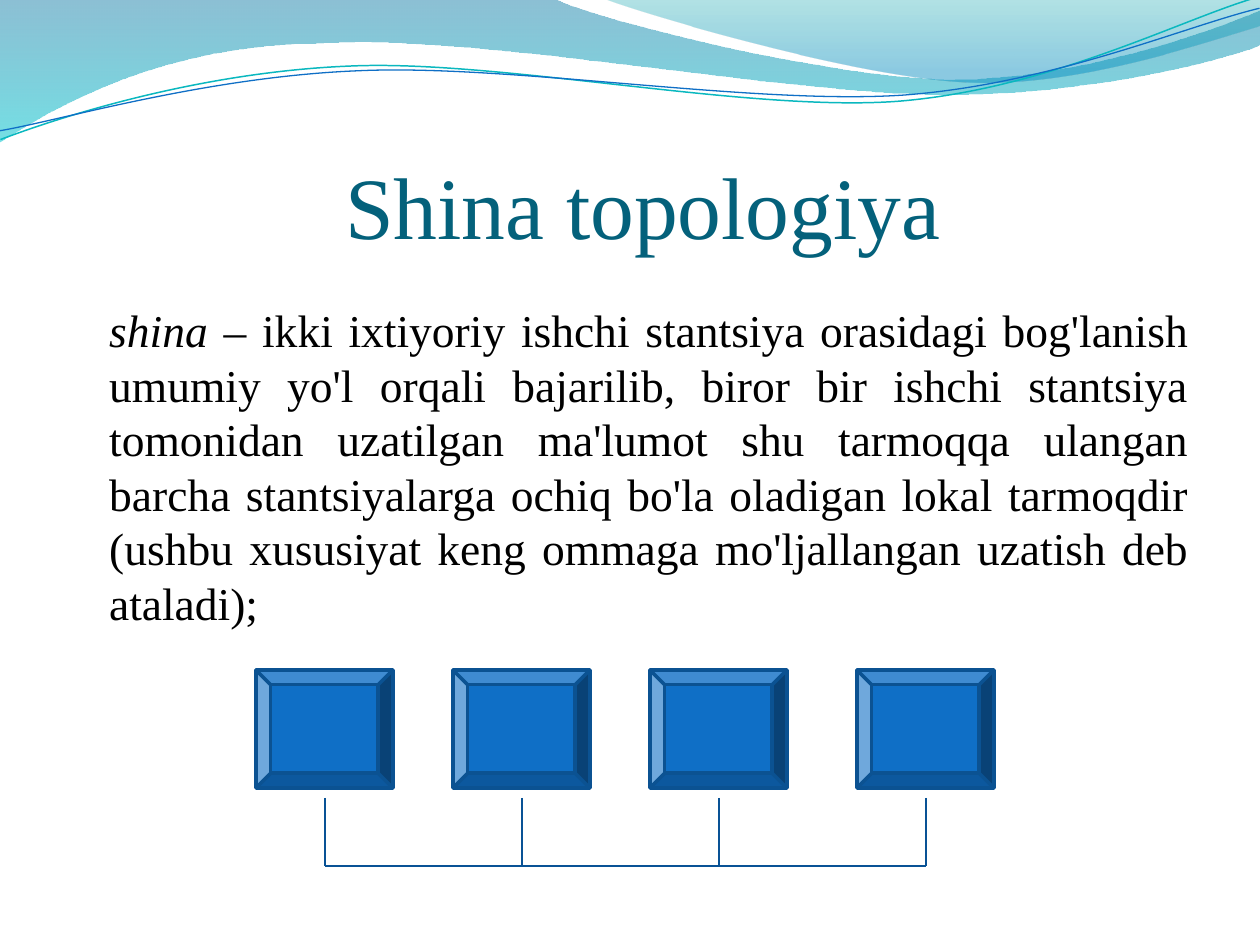
from dataclasses import dataclass

from pptx import Presentation, util as u
from pptx.dml.color import RGBColor
from pptx.enum import shapes as sh, text as tx
from pptx.oxml.ns import qn
from lxml import etree

PX = 914400 // 126  # EMU per px


@dataclass(frozen=True)
class Theme:
    font: str = "Times New Roman"
    head: str = "04617B"
    ink: str = "000000"
    box: str = "0F6FC6"
    edge: str = "0B5292"
    wire: str = "095295"
    teal: str = "0AB8BF"
    head_pt: int = 50
    body_pt: int = 26


T = Theme()

TITLE = "Shinа tоpоlоgiya"
TERM = "\tshinа"
BODY = (
    " – ikki iхtiyoriy ishchi stаntsiya оrаsidаgi bоg'lаnish umumiy yo'l оrqаli "
    "bаjаrilib, birоr bir ishchi stаntsiya tоmоnidаn uzаtilgаn mа'lumоt shu tаrmоqqа "
    "ulаngаn bаrchа stаntsiyalаrgа оchiq bo'lа оlаdigаn lоkаl tаrmоqdir (ushbu "
    "хususiyat kеng оmmаgа mo'ljаllаngаn uzаtish dеb аtаlаdi);"
)

# Each step holds one point (straight) or three (curve)
BAND = [[(0, -1)], [(554, -1)],
        [(600, 21), (837, 79), (955, 79)], [(1075, 79), (1207, 33), (1260, 11)],
        [(1261, 45)],
        [(1239, 55), (1096, 96), (940, 94)], [(784, 94), (481, 35), (324, 43)],
        [(163, 44), (58, 105), (-1, 142)], [(0, -1)]]
CREST = [[(604, -1)],
         [(641, 14), (859, 78), (969, 82)], [(1079, 87), (1211, 40), (1260, 26)],
         [(1260, 0)], [(604, -1)]]
# Lines before their tilt
TILT = 357.3
TOP_LINE = [[(-2, 110)], [(59, 90), (200, 52), (350, 53)],
            [(499, 53), (745, 118), (896, 114)], [(1049, 109), (1184, 45), (1260, 27)]]
LOW_LINE = [[(-2, 101)], [(57, 94), (206, 57), (358, 58)],
            [(509, 58), (751, 111), (902, 108)], [(1052, 104), (1188, 52), (1262, 38)]]

# Bus diagram
BOX_X = (256, 453, 650, 857)
BOX_Y, BOX_W, BOX_H = 670, 137, 118
STUB_Y, BUS_Y = 798, 866


def rgb(code):
    return RGBColor.from_string(code)


def add_path(slide, steps, close):
    """Lay all points as segments, then join each three into a curve."""
    start, *rest = steps
    pen = slide.shapes.build_freeform(*start[0], scale=PX)
    pen.add_line_segments([p for step in rest for p in step], close=close)
    shape = pen.convert_to_shape()
    shape.shadow.inherit = False
    legs = iter(list(shape._element.iter(qn("a:lnTo"))))
    for step in rest:
        group = [next(legs) for _ in step]
        if len(group) == 3:
            curve = etree.Element(qn("a:cubicBezTo"))
            group[0].addprevious(curve)
            for leg in group:
                curve.append(leg[0])
                leg.getparent().remove(leg)
    return shape


def add_wave(slide, steps, stops):
    """Stops are (position, colour, opacity in percent)."""
    shape = add_path(slide, steps, True)
    shape.line.fill.background()
    shape.fill.gradient()
    shape.fill.gradient_angle = 270
    for stop, (pos, code, _) in zip(shape.fill.gradient_stops, stops):
        stop.position = pos
        stop.color.rgb = rgb(code)
    for node, (_, _, alpha) in zip(shape._element.spPr.iter(qn("a:srgbClr")), stops):
        etree.SubElement(node, qn("a:alpha"), val=str(alpha * 1000))


def add_curve(slide, steps, code, width):
    shape = add_path(slide, steps, False)
    shape.rotation = TILT
    shape.fill.background()
    shape.line.color.rgb = rgb(code)
    shape.line.width = u.Pt(width)


def add_text(slide, box, runs, size, code, align):
    """Runs are (text, italic)."""
    frame = slide.shapes.add_textbox(*(v * PX for v in box)).text_frame
    frame.word_wrap = True
    para = frame.paragraphs[0]
    para.alignment = align
    for words, slant in runs:
        run = para.add_run()
        run.text = words
        run.font.name = T.font
        run.font.size = u.Pt(size)
        run.font.italic = slant
        run.font.color.rgb = rgb(code)
    return frame


def add_box(slide, x):
    box = slide.shapes.add_shape(
        sh.MSO_SHAPE.BEVEL, x * PX, BOX_Y * PX, BOX_W * PX, BOX_H * PX)
    box.shadow.inherit = False
    box.fill.solid()
    box.fill.fore_color.rgb = rgb(T.box)
    box.line.color.rgb = rgb(T.edge)
    box.line.width = u.Pt(2)


def add_wire(slide, *ends):
    wire = slide.shapes.add_connector(
        sh.MSO_CONNECTOR.STRAIGHT, *(v * PX for v in ends))
    wire.line.color.rgb = rgb(T.wire)
    wire.line.width = u.Pt(0.75)
    etree.SubElement(wire._element.spPr, qn("a:effectLst"))


def main():
    deck = Presentation()
    deck.slide_width, deck.slide_height = u.Inches(10), u.Inches(7.5)
    slide = deck.slides.add_slide(deck.slide_layouts[6])

    # Waves along the top
    add_wave(slide, BAND, [(0, "0074A1", 45), (1, "00C6CF", 55)])
    add_wave(slide, CREST, [(0, "00A1A9", 30), (0.8, "008BBF", 45)])
    add_curve(slide, TOP_LINE, T.teal, 0.85)
    add_curve(slide, LOW_LINE, T.box, 0.75)

    # Title
    head = add_text(slide, (59, 108, 1168, 149), [(TITLE, False)],
                    T.head_pt, T.head, tx.PP_ALIGN.CENTER)
    head.vertical_anchor = tx.MSO_ANCHOR.BOTTOM
    head.margin_left = head.margin_right = head.margin_bottom = 0

    # Definition, with a hanging indent
    body = add_text(slide, (59, 296, 1143, 344), [(TERM, True), (BODY, False)],
                    T.body_pt, T.ink, tx.PP_ALIGN.JUSTIFY)
    props = body.paragraphs[0]._p.get_or_add_pPr()
    props.set("marL", str(u.Inches(0.3)))
    props.set("indent", str(u.Inches(-0.3)))

    # Stations on a shared bus
    for x in BOX_X:
        add_box(slide, x)
    mids = [x + BOX_W // 2 + 1 for x in BOX_X]
    add_wire(slide, mids[0], BUS_Y, mids[-1], BUS_Y)
    for mid in mids:
        add_wire(slide, mid, STUB_Y, mid, BUS_Y)

    deck.save("out.pptx")


if __name__ == "__main__":
    main()
